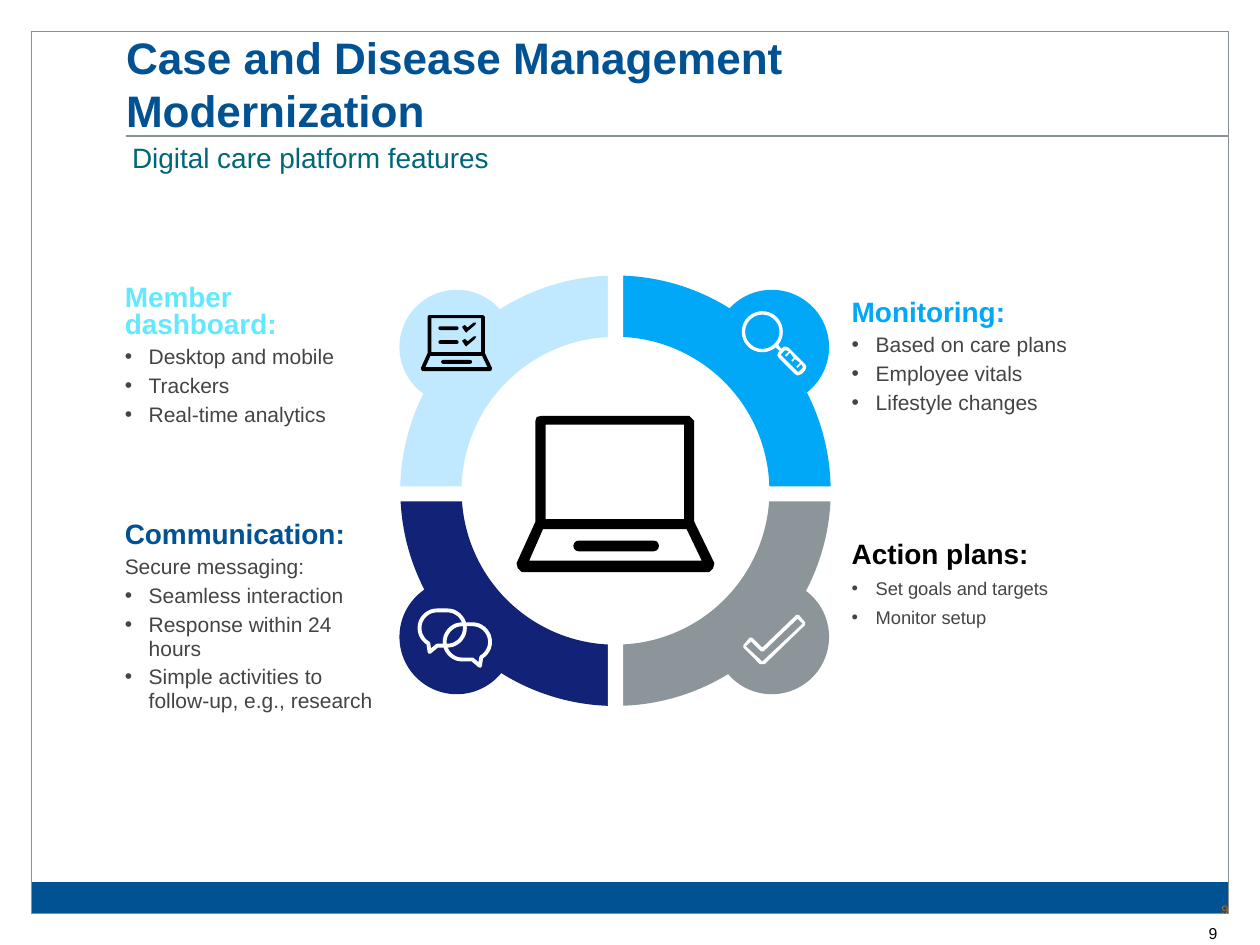
from dataclasses import dataclass
from math import cos, radians, sin

from lxml import etree
from pptx import Presentation
from pptx import util as u
from pptx.dml.color import RGBColor
from pptx.enum import shapes, text
from pptx.oxml.ns import qn

BOX = shapes.MSO_SHAPE.RECTANGLE
PILL = shapes.MSO_SHAPE.ROUNDED_RECTANGLE
DISC = shapes.MSO_SHAPE.OVAL
ARC = shapes.MSO_SHAPE.ARC
LEFT, RIGHT = text.PP_ALIGN.LEFT, text.PP_ALIGN.RIGHT
TOP, LOW = text.MSO_ANCHOR.TOP, text.MSO_ANCHOR.BOTTOM


@dataclass(frozen=True)
class Theme:
    font: str = "Arial"
    blue: str = "005293"
    rule: str = "879196"
    teal: str = "006778"
    sky: str = "00A8F7"
    pale: str = "C0E9FF"
    navy: str = "122377"
    grey: str = "8C9599"
    cyan: str = "63E9FF"
    body: str = "444444"
    rust: str = "DD6000"
    black: str = "000000"
    white: str = "FFFFFF"
    title: float = 25.2
    head: float = 16
    item: float = 12
    small: float = 10.5
    page: float = 9
    tiny: float = 7


def ring(x, y, r, start, end, step=10):
    turn = step if end > start else -step
    return [(x + r * cos(radians(a)), y + r * sin(radians(a)))
            for a in range(start, end + turn, turn)]


def bubble(x, y, side):
    pts = [(-4, 14), (4, 14)] + ring(4, 0, 14, 90, -90)
    pts += ring(-4, 0, 14, 270, 120) + [(-10, 19)]
    return [(x + side * a, y + b) for a, b in pts]


class Deck:
    def __init__(self, theme):
        self.t = theme
        self.prs = Presentation()
        self.prs.slide_width, self.prs.slide_height = u.Inches(10), u.Inches(7.5)
        self.cell = self.prs.slide_width / 1000
        self.slide = self.prs.slides.add_slide(self.prs.slide_layouts[4])
        self.shapes = self.slide.shapes

    def grid(self, *vals):
        return [u.Emu(round(v * self.cell)) for v in vals]

    def place(self, obj, at):
        obj.left, obj.top, obj.width, obj.height = self.grid(*at)

    def paint(self, obj, fill=None, line=None, width=1):
        obj.shadow.inherit = False
        if fill:
            obj.fill.solid()
            obj.fill.fore_color.rgb = RGBColor.from_string(fill)
        else:
            obj.fill.background()
        if line:
            obj.line.color.rgb = RGBColor.from_string(line)
            obj.line.width = u.Pt(width)
        else:
            obj.line.fill.background()

    def shape(self, kind, at, fill=None, line=None, width=1, turn=0):
        obj = self.shapes.add_shape(kind, *self.grid(*at))
        self.paint(obj, fill, line, width)
        obj.rotation = turn
        return obj

    def bar(self, at, fill):
        self.shape(PILL, at, fill).adjustments[0] = 0.5

    def rule(self, x1, y1, x2, y2, color, width):
        obj = self.shapes.add_connector(
            shapes.MSO_CONNECTOR.STRAIGHT, *self.grid(x1, y1, x2, y2))
        obj.line.color.rgb = RGBColor.from_string(color)
        obj.line.width = u.Pt(width)
        etree.SubElement(obj._element.spPr, qn("a:effectLst"))

    def icon(self, loops, fill=None, line=None, width=1):
        loops = [[(x * 10, y * 10) for x, y in loop] for loop in loops]
        pen = self.shapes.build_freeform(*loops[0][0], scale=self.cell / 10)
        for n, loop in enumerate(loops):
            if n:
                pen.move_to(*loop[0])
            pen.add_line_segments(loop[1:], close=True)
        self.paint(pen.convert_to_shape(), fill, line, width)

    def laptop(self, x, y, k):
        loops = [
            [(0, 117), (15, 84), (15, 4), (16, 1), (20, 0), (137, 0), (141, 4),
             (141, 84), (157, 117), (156, 121), (153, 124), (4, 124), (1, 121)],
            [(10, 115), (21, 90), (135, 90), (147, 115)],
            [(23, 7), (133, 7), (133, 82), (23, 82)],
        ]
        self.icon([[(x + a * k, y + b * k) for a, b in loop] for loop in loops],
                  self.t.black)
        self.bar((x + 45 * k, y + 99 * k, 68 * k, 8.6 * k), self.t.black)

    def run(self, para, words, size, color, bold=False):
        run = para.add_run()
        run.text = words
        run.font.name, run.font.size, run.font.bold = self.t.font, u.Pt(size), bold
        run.font.color.rgb = RGBColor.from_string(color)

    def frame(self, obj, anchor, pad=(0, 0), fit=text.MSO_AUTO_SIZE.NONE):
        tf = obj.text_frame
        tf.word_wrap, tf.auto_size, tf.vertical_anchor = True, fit, anchor
        tf.margin_left = tf.margin_right = self.grid(pad[0])[0]
        tf.margin_top = tf.margin_bottom = self.grid(pad[1])[0]
        return tf

    def title(self, at, words):
        obj = self.shapes.title
        self.place(obj, at)
        para = self.frame(obj, LOW).paragraphs[0]
        para.alignment = LEFT
        self.run(para, words, self.t.title, self.t.blue, True)

    def label(self, at, words, size, color, align=LEFT, anchor=TOP,
              pad=(10, 5), wrap=True):
        obj = self.shapes.add_textbox(*self.grid(*at))
        tf = self.frame(obj, anchor, pad)
        tf.word_wrap = wrap
        tf.paragraphs[0].alignment = align
        self.run(tf.paragraphs[0], words, size, color)

    def line(self, para, pitch, dot=False):
        props = para._p.get_or_add_pPr()
        inset = self.grid(19)[0] if dot else 0
        props.set("marL", str(inset))
        props.set("indent", str(-inset))
        if dot:
            etree.SubElement(props, qn("a:buFont"), typeface=self.t.font)
            etree.SubElement(props, qn("a:buChar"), char="•")
        else:
            etree.SubElement(props, qn("a:buNone"))
        para.alignment = LEFT
        para.line_spacing = u.Pt(pitch)
        para.space_before, para.space_after = u.Pt(0), u.Pt(3)

    def list(self, slot, at, head, color, items, size, intro=None):
        obj = self.slide.placeholders[slot]
        self.place(obj, at)
        tf = self.frame(obj, TOP, (0, 5), text.MSO_AUTO_SIZE.SHAPE_TO_FIT_TEXT)
        para = tf.paragraphs[0]
        self.line(para, 15.5)
        for n, part in enumerate(head.split("\n")):
            if n:
                para.add_line_break()
            self.run(para, part, self.t.head, color, True)
        for words in ([intro] if intro else []) + items:
            para = tf.add_paragraph()
            self.line(para, 13.5, words != intro)
            self.run(para, words, size, self.t.body)


def main():
    t = Theme()
    d = Deck(t)
    d.shape(BOX, (25, 700, 950, 25), t.blue)
    d.shape(BOX, (25, 25, 950, 700), line=t.rule)
    d.rule(100, 108, 975, 108, t.rule, 0.75)
    d.title((100, 25, 600, 83), "Case and Disease Management Modernization")

    for n, color in enumerate((t.sky, t.grey, t.navy, t.pale)):
        d.shape(ARC, (342, 243, 293, 293), line=color, width=35, turn=90 * n)
    for n, color in enumerate((t.pale, t.sky, t.navy, t.grey)):
        d.shape(DISC, (317 + n % 2 * 250, 230 + n // 2 * 230, 91, 91), color)
    for x, y, turn in ((302, 386, 0), (304, 385, 270)):
        d.shape(BOX, (x, y, 369, 12), t.white, turn=turn)

    d.list(1, (99, 222, 207, 127), "Member\ndashboard:", t.cyan,
           ["Desktop and mobile", "Trackers", "Real-time analytics"], t.item)
    d.list(2, (99, 410, 207, 167), "Communication:", t.blue,
           ["Seamless interaction", "Response within 24 hours",
            "Simple activities to follow-up, e.g., research"],
           t.item, "Secure messaging:")
    d.list(3, (676, 234, 207, 128), "Monitoring:", t.sky,
           ["Based on care plans", "Employee vitals", "Lifestyle changes"], t.item)
    d.list(4, (676, 426, 222, 80), "Action plans:", t.black,
           ["Set goals and targets", "Monitor setup"], t.small)

    d.laptop(410, 330, 1)
    d.laptop(334, 250, 0.36)
    tick = [(2, 7), (3, 8), (4, 7), (10, 2), (11, 0), (9, 0), (4, 4), (2, 2),
            (0, 3), (0, 4)]
    for y in (256, 267):
        d.icon([[(367 + a, y + b) for a, b in tick]], t.black)
        d.bar((348, y + 3, 16, 3), t.black)

    lens = ring(605, 263.3, 16.3, 39, -311) + [
        (619, 279), (618, 279), (617, 282), (618, 284), (631, 297), (633, 298),
        (636, 297), (639, 294), (640, 291), (639, 289), (626, 276), (623, 275),
        (621, 276), (620, 277)]
    grip = [(637, 292), (634, 295), (633, 295), (620, 282), (620, 281),
            (623, 278), (624, 278), (626, 279), (623, 282), (624, 283),
            (627, 280), (630, 284), (628, 286), (629, 287), (631, 285),
            (635, 288), (632, 291), (633, 292), (636, 289), (637, 291)]
    d.icon([lens, ring(605, 263.3, 13.6, 0, 350), grip], t.white)
    d.icon([bubble(351, 498.5, 1), bubble(371, 509.5, -1)], line=t.white, width=2.2)
    d.icon([
        [(605, 527), (603, 527), (590, 514), (590, 512), (595, 506), (597, 506),
         (605, 514), (632, 488), (634, 488), (639, 494), (639, 496), (607, 527)],
        [(592, 513), (605, 525), (637, 495), (633, 491), (606, 517), (604, 517),
         (596, 509)],
    ], t.white)

    d.label((859, 728, 117, 18), "9", t.page, t.black, RIGHT)
    d.label((947, 713, 28, 15), "9", t.tiny, t.rust, RIGHT, LOW, (0, 0))
    d.label((95, 107, 307, 37), "Digital care platform features", t.head, t.teal,
            wrap=False)
    d.prs.save("out.pptx")


if __name__ == "__main__":
    main()
